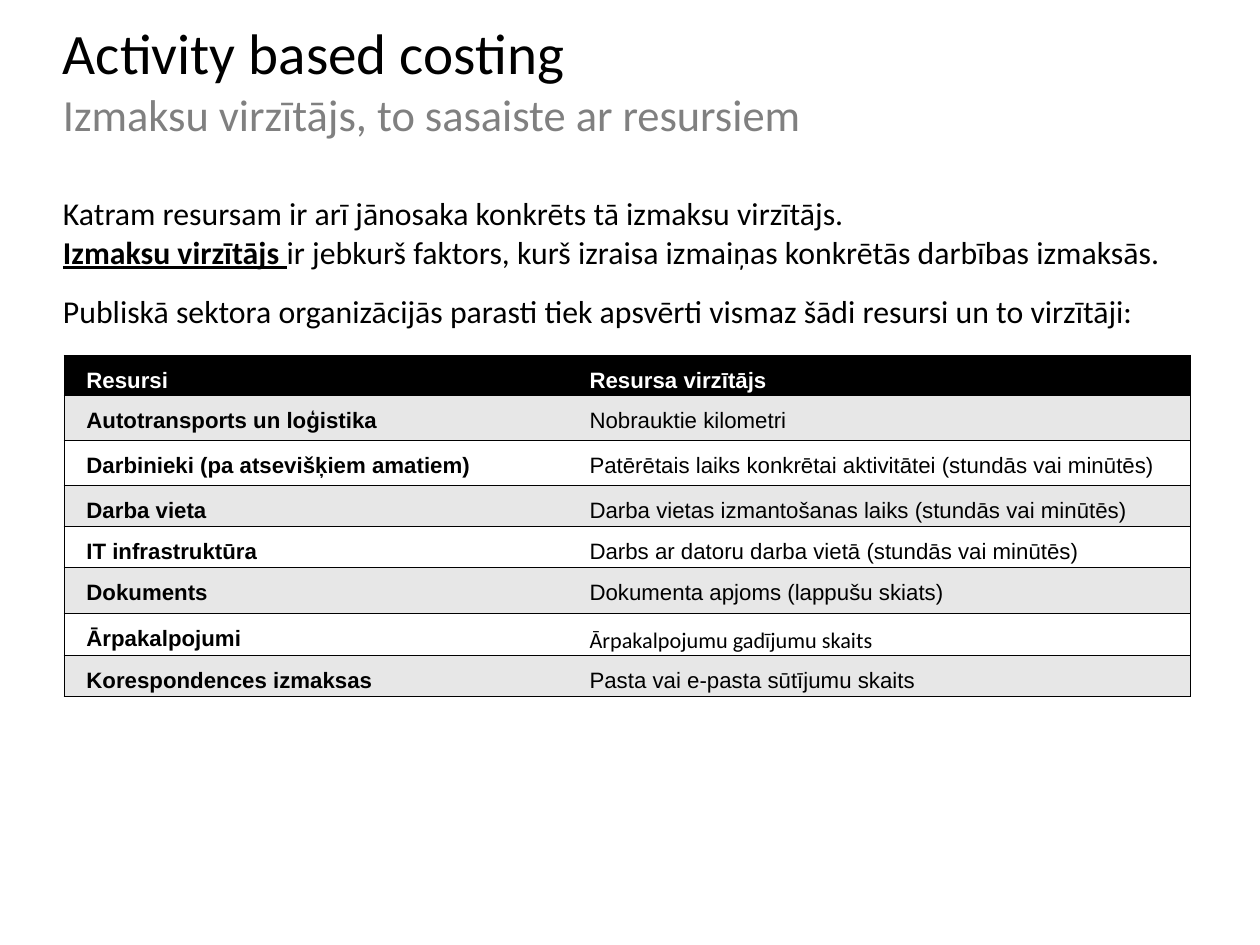
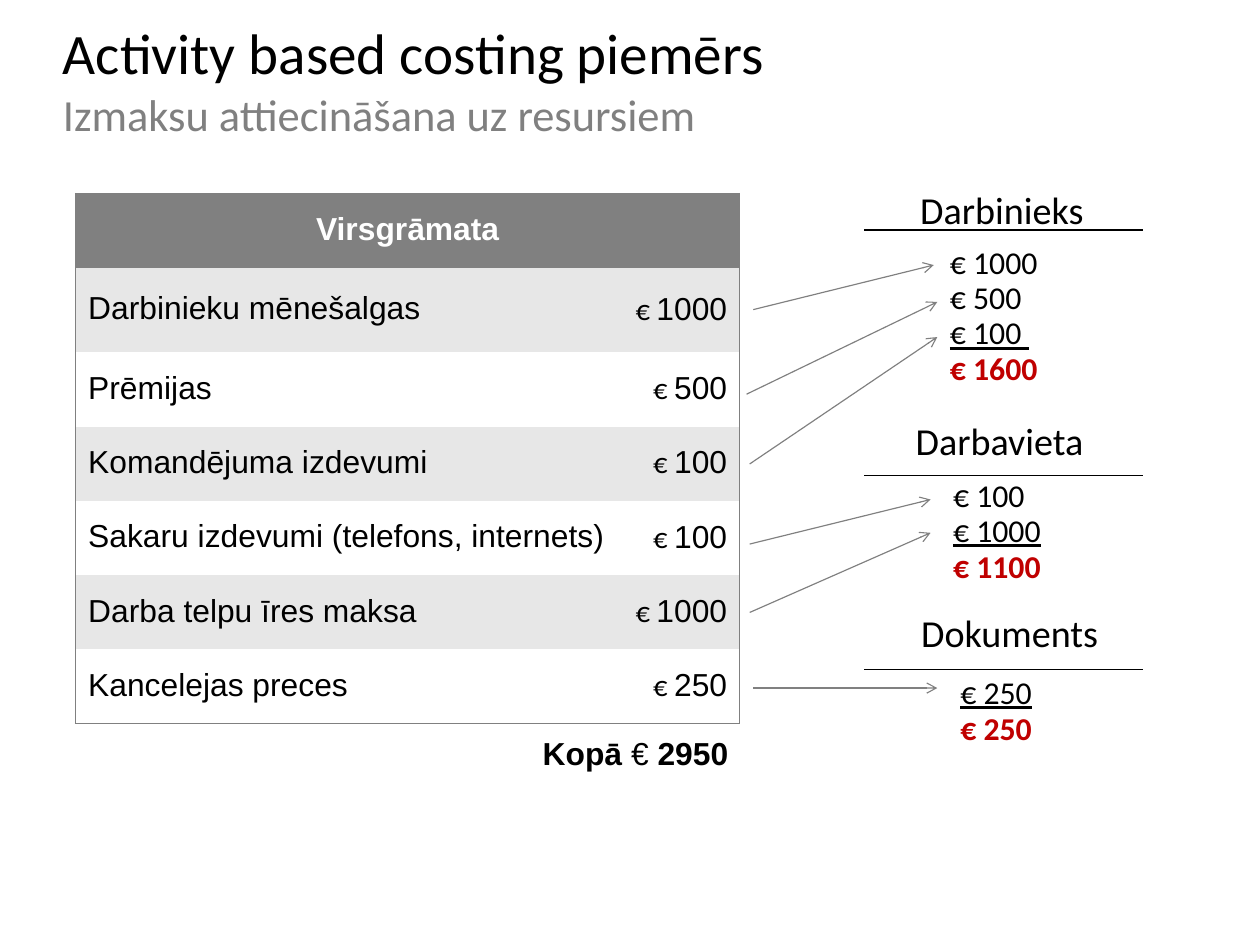
"""Build two slides on activity based costing."""
import pptx
import pptx.dml.color
import pptx.enum.shapes
import pptx.enum.text
import pptx.oxml
import pptx.oxml.ns
import pptx.util
from lxml import etree

Cm = pptx.util.Cm
Pt = pptx.util.Pt
Align = pptx.enum.text.PP_ALIGN
Anchor = pptx.enum.text.MSO_ANCHOR
qn = pptx.oxml.ns.qn

HUES = {"black": "000000", "white": "FFFFFF", "gray": "808080",
        "band": "E7E7E7", "red": "C00000"}
BASE = {"name": "Calibri", "size": Pt(20), "color": "black"}
ARIAL = {"name": "Arial"}
BOLD = {"bold": True}
UNDER = {"underline": True}
TOTAL = {"bold": True, "color": "red"}
TIGHT = {"line_spacing": 0.93}
LOOSE = {"line_spacing": 1.01}
FLUSH = (0, 0, 0, 0)
INSET = (0.28, 0.15, 0.28, 0.15)


def hue(name):
    return pptx.dml.color.RGBColor.from_string(HUES[name])


def apply(target, form):
    for key, value in form.items():
        if key == "color":
            target.color.rgb = hue(value)
        else:
            setattr(target, key, value)


class Deck:
    """Holds the shared style and the current slide."""

    def __init__(self):
        self.show = pptx.Presentation()
        self.show.slide_width, self.show.slide_height = Cm(28), Cm(21)
        self.page = None

    def slide(self, title, sub):
        self.page = self.show.slides.add_slide(self.show.slide_layouts[6])
        runs = [(title + "\n", {"size": Pt(36)}),
                (sub, {"size": Pt(28), "color": "gray"})]
        self.text((1.4, 0, 25.2, 3.5), [runs], FLUSH, LOOSE,
                  anchor=Anchor.MIDDLE)

    def fill(self, frame, paras, form, font=None):
        for index, runs in enumerate(paras):
            para = frame.paragraphs[0] if index == 0 else frame.add_paragraph()
            apply(para, form if index else {**form, "space_before": Pt(0)})
            for words, extra in runs:
                for count, line in enumerate(words.split("\n")):
                    if count:
                        para.add_line_break()
                    if line:
                        run = para.add_run()
                        run.text = line
                        apply(run.font, {**BASE, **(font or {}), **extra})

    def text(self, area, paras, inset, form, font=None, anchor=Anchor.TOP,
             wrap=True):
        frame = self.page.shapes.add_textbox(*map(Cm, area)).text_frame
        frame.word_wrap, frame.vertical_anchor = wrap, anchor
        sides = ("left", "top", "right", "bottom")
        apply(frame, {"margin_" + s: Cm(v) for s, v in zip(sides, inset)})
        self.fill(frame, paras, form, font)

    def grid(self, area, cols, rows):
        table = self.page.shapes.add_table(
            len(rows), len(cols), *map(Cm, area)).table
        for col, size in zip(table.columns, cols):
            col.width = Cm(size)
        for row, size in zip(table.rows, rows):
            row.height = Cm(size)
        return table

    def cell(self, cell, runs, inset, form, font, back, edges, line):
        sides = ("left", "top", "right", "bottom")
        apply(cell, {"margin_" + s: Cm(v) for s, v in zip(sides, inset)})
        props = cell._tc.get_or_add_tcPr()
        for side in "LRTB":
            edge = etree.SubElement(props, qn("a:ln" + side), w=str(Pt(1)))
            if side in edges:
                paint = etree.SubElement(edge, qn("a:solidFill"))
                etree.SubElement(paint, qn("a:srgbClr"), val=HUES[line])
            else:
                etree.SubElement(edge, qn("a:noFill"))
        cell.fill.solid()
        cell.fill.fore_color.rgb = hue(back)
        self.fill(cell.text_frame, [runs], form, font)

    def line(self, start, end, color, arrow=False):
        link = self.page.shapes.add_connector(
            pptx.enum.shapes.MSO_CONNECTOR.STRAIGHT,
            *map(Cm, start + end))
        link.line.color.rgb = hue(color)
        link.line.width = Pt(0.75)
        if arrow:
            etree.SubElement(link.line._get_or_add_ln(), qn("a:tailEnd"),
                             type="arrow")
        etree.SubElement(link._element.spPr, qn("a:effectLst"))


def drivers(deck):
    deck.slide("Activity based costing",
               "Izmaksu virzītājs, to sasaiste ar resursiem")
    deck.text((1.4, 4.3, 25, 4), [
        [("Katram resursam ir arī jānosaka konkrēts tā izmaksu virzītājs.\n", {}),
         ("Izmaksu virzītājs ", {**BOLD, **UNDER}),
         ("ir jebkurš faktors, kurš izraisa izmaiņas konkrētās darbības "
          "izmaksās.", {})],
        [("Publiskā sektora organizācijās parasti tiek apsvērti vismaz šādi "
          "resursi un to virzītāji:", {})],
    ], FLUSH, {**LOOSE, "space_before": Pt(6.6), "space_after": Pt(6.6)})
    rows = [
        ("Resursi", "Resursa virzītājs", 0.84),
        ("Autotransports un loģistika", "Nobrauktie kilometri", 1),
        ("Darbinieki (pa atsevišķiem amatiem)",
         "Patērētais laiks konkrētai aktivitātei (stundās vai minūtēs)", 1),
        ("Darba vieta",
         "Darba vietas izmantošanas laiks (stundās vai minūtēs)", 0.91),
        ("IT infrastruktūra",
         "Darbs ar datoru darba vietā (stundās vai minūtēs)", 0.91),
        ("Dokuments", "Dokumenta apjoms (lappušu skiats)", 1.02),
        ("Ārpakalpojumi", "Ārpakalpojumu gadījumu skaits", 0.94),
        ("Korespondences izmaksas", "Pasta vai e-pasta sūtījumu skaits", 0.91),
    ]
    table = deck.grid((1.43, 7.9, 25.02, 7.53), (11.18, 13.84),
                      [row[2] for row in rows])
    for i, row in enumerate(rows):
        back = "black" if i == 0 else ("white", "band")[i % 2]
        for j, words in enumerate(row[:2]):
            font = {"size": Pt(14), "bold": i == 0 or j == 0,
                    "color": "white" if i == 0 else "black",
                    "name": "Calibri" if (i, j) == (6, 1) else "Arial"}
            deck.cell(table.cell(i, j), [(words, {})], (0.49, 0, 0.08, 0),
                      {"alignment": Align.JUSTIFY, "line_spacing": 1.5},
                      font, back, "TB" + "LR"[j], "black")


def ledger(deck):
    deck.slide("Activity based costing piemērs",
               "Izmaksu attiecināšana uz resursiem")
    costs = [("Darbinieku mēnešalgas", "1000"), ("Prēmijas", "500"),
             ("Komandējuma izdevumi", "100"),
             ("Sakaru izdevumi (telefons, internets)", "100"),
             ("Darba telpu īres maksa", "1000"), ("Kancelejas preces", "250")]
    table = deck.grid((1.68, 4.3, 14.76, 11.8), (12.09, 2.67),
                      [1.65, 1.88] + [1.65] * 5)
    head = table.cell(0, 0)
    head.merge(table.cell(0, 1))
    head.vertical_anchor = Anchor.MIDDLE
    for cell, runs in ((head, [("Virsgrāmata", {})]), (table.cell(0, 1), [])):
        deck.cell(cell, runs, INSET, {**TIGHT, "alignment": Align.CENTER},
                  {**ARIAL, **BOLD, "color": "white"}, "gray", "LTR", "gray")
    for i, (name, sum_) in enumerate(costs, 1):
        pair = ([(name, {})],
                [("€ ", {"name": "Calibri", "size": Pt(18)}), (sum_, {})])
        for j, runs in enumerate(pair):
            cell = table.cell(i, j)
            cell.vertical_anchor = Anchor.MIDDLE
            side = (Align.LEFT, Align.RIGHT)[j]
            edges = "LR"[j] + ("B" if i == len(costs) else "")
            deck.cell(cell, runs, INSET, {**TIGHT, "alignment": side}, ARIAL,
                      ("white", "band")[i % 2], edges, "gray")
    deck.text((11.81, 16.26, 4.8, 1.04),
              [[("Kopā ", BOLD), ("€ ", {}), ("2950", BOLD)]],
              (0.25, 0.13, 0.25, 0.13), TIGHT, ARIAL)

    accounts = [
        ("Darbinieks", (20.17, 4.09, 4.24, 1.24), 5.11, (20.83, 5.31),
         ("€ 1000", "€ 500", "€ 100 ", "€ 1600")),
        ("Darbavieta", (20.07, 9.22, 4.34, 1.24), 10.57, (20.9, 10.49),
         ("€ 100", "€ 1000", "€ 1100")),
        ("Dokuments", (20.19, 13.49, 4.55, 1.24), 14.88, (21.06, 14.88),
         ("€ 250", "€ 250")),
    ]
    for name, area, rule, spot, sums in accounts:
        deck.text(area, [[(name, {"size": Pt(24)})]], INSET, TIGHT, wrap=False)
        looks = [{}] * (len(sums) - 2) + [UNDER, TOTAL]
        deck.text(spot + (2.8, 0.3 + 0.79 * len(sums)),
                  [[pair] for pair in zip(sums, looks)], INSET, TIGHT)
        deck.line((19.2, rule), (25.4, rule), "black")

    for start, end in [((16.74, 6.88), (20.75, 5.89)),
                       ((16.59, 8.76), (20.83, 6.71)),
                       ((16.66, 10.31), (20.83, 7.49)),
                       ((16.66, 12.09), (20.68, 11.1)),
                       ((16.66, 13.61), (20.68, 11.84)),
                       ((16.74, 15.29), (20.83, 15.29))]:
        deck.line(start, end, "gray", arrow=True)


def main():
    deck = Deck()
    drivers(deck)
    ledger(deck)
    deck.show.save("out.pptx")


if __name__ == "__main__":
    main()
